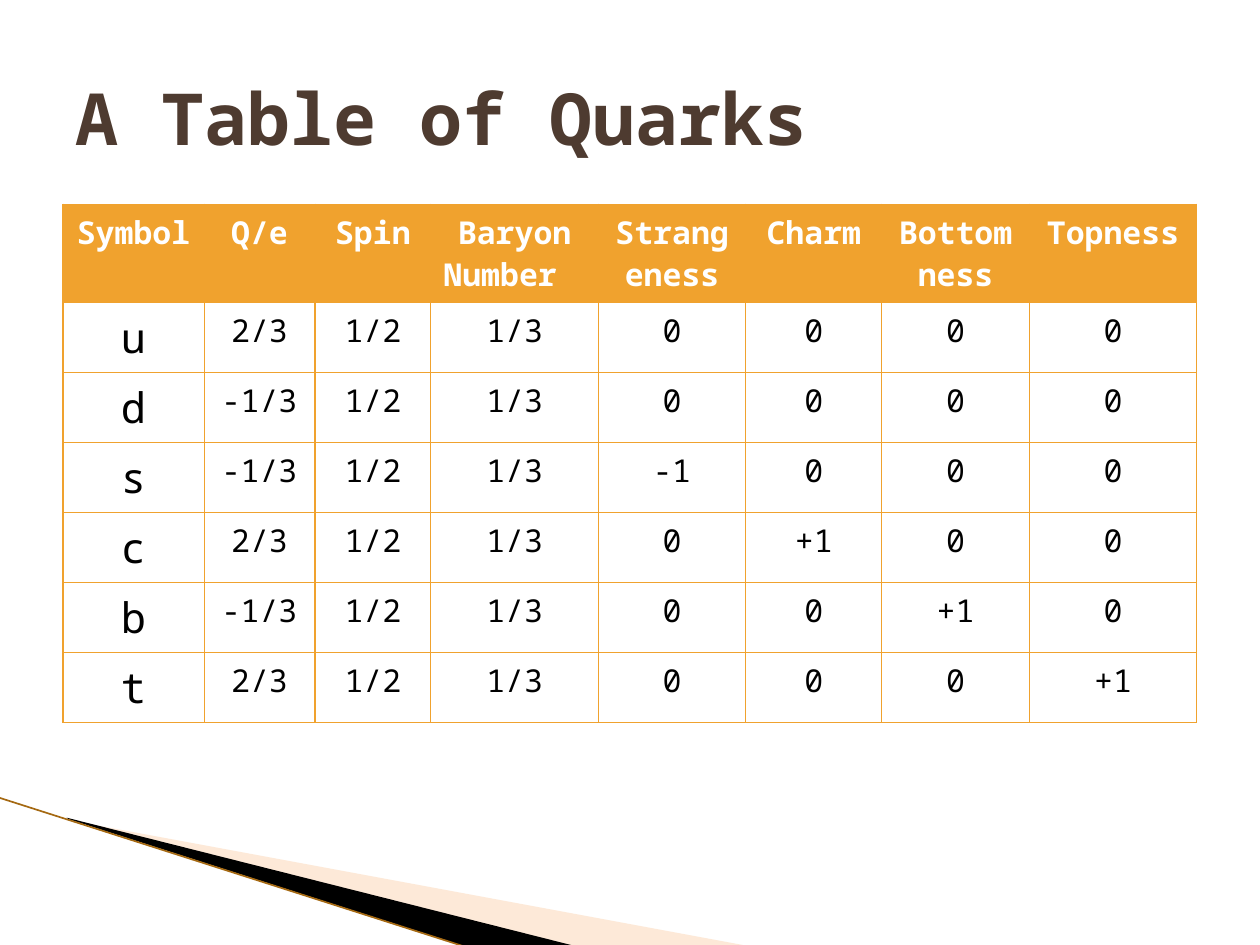
from lxml.etree import SubElement
from pptx import Presentation
from pptx.dml.color import RGBColor
from pptx.enum.shapes import MSO_CONNECTOR
from pptx.enum.text import MSO_ANCHOR, PP_ALIGN
from pptx.oxml.ns import qn
from pptx.util import Inches, Pt

FONT = "Noto Sans Mono"
ORANGE = RGBColor(0xF0, 0xA2, 0x2E)
PEACH = RGBColor(0xFB, 0xC9, 0x9E)
BRONZE = RGBColor(0xA5, 0x69, 0x12)
BROWN = RGBColor(0x4E, 0x3B, 0x30)
BLACK = RGBColor(0, 0, 0)
WHITE = RGBColor(255, 255, 255)

SLIDE_W, SLIDE_H = Inches(10), Inches(7.5)
MARGIN = Inches(0.5)
CONTENT_W = SLIDE_W - 2 * MARGIN

HEADINGS = ["Symbol", "Q/e", "Spin", "Baryon\nNumber", "Strangeness",
            "Charm", "Bottomness", "Topness"]
COLUMN_SHARES = [1.12, 0.88, 0.92, 1.33, 1.17, 1.08, 1.17, 1.33]
QUARKS = [
    ("u", "2/3", "1/2", "1/3", "0", "0", "0", "0"),
    ("d", "-1/3", "1/2", "1/3", "0", "0", "0", "0"),
    ("s", "-1/3", "1/2", "1/3", "-1", "0", "0", "0"),
    ("c", "2/3", "1/2", "1/3", "0", "+1", "0", "0"),
    ("b", "-1/3", "1/2", "1/3", "0", "0", "+1", "0"),
    ("t", "2/3", "1/2", "1/3", "0", "0", "0", "+1"),
]


def add_run(paragraph, text, size, color, bold=False):
    run = paragraph.add_run()
    run.text = text
    font = run.font
    font.name, font.size, font.bold = FONT, Pt(size), bold
    font.color.rgb = color


def add_wedge(slide, corners, color, opacity=100):
    """Fill a polygon whose corners are given in inches."""
    start, *others = [(Inches(x), Inches(y)) for x, y in corners]
    builder = slide.shapes.build_freeform(*start)
    builder.add_line_segments(others, close=True)
    wedge = builder.convert_to_shape()
    wedge.shadow.inherit = False
    wedge.fill.solid()
    wedge.fill.fore_color.rgb = color
    wedge.line.fill.background()
    if opacity < 100:
        fill_color = wedge._element.spPr.find(qn("a:solidFill"))[0]
        SubElement(fill_color, qn("a:alpha"), val=str(opacity * 1000))


def add_corner_sweep(slide):
    add_wedge(slide, [(0.55, 6.51), (5.95, 7.51), (4.56, 7.51), (0.55, 6.5)], PEACH, 40)
    add_wedge(slide, [(0.53, 6.49), (4.57, 7.51), (3.72, 7.52), (0.54, 6.5)], BLACK)
    edge = slide.shapes.add_connector(
        MSO_CONNECTOR.STRAIGHT, Inches(-0.01), Inches(6.33), Inches(3.71), Inches(7.52))
    edge.line.color.rgb = BRONZE
    edge.line.width = Pt(0.95)
    SubElement(edge._element.spPr, qn("a:effectLst"))


def set_borders(cell):
    properties = cell._tc.get_or_add_tcPr()
    for position, side in enumerate(("a:lnL", "a:lnR", "a:lnT", "a:lnB")):
        border = properties.makeelement(qn(side), {"w": str(Pt(0.75))})
        fill = SubElement(border, qn("a:solidFill"))
        SubElement(fill, qn("a:srgbClr"), val=str(ORANGE))
        properties.insert(position, border)


def fill_cell(cell, text, size, color, heading):
    if heading:
        cell.fill.solid()
        cell.fill.fore_color.rgb = ORANGE
    else:
        cell.fill.background()
    set_borders(cell)
    frame = cell.text_frame
    for index, line in enumerate(text.split("\n")):
        paragraph = frame.add_paragraph() if index else frame.paragraphs[0]
        paragraph.alignment = PP_ALIGN.LEFT if index else PP_ALIGN.CENTER
        add_run(paragraph, line, size, color, heading)


def add_quark_table(slide, left, top, width, row_height):
    rows = [HEADINGS, *QUARKS]
    table = slide.shapes.add_table(
        len(rows), len(HEADINGS), left, top, width, row_height * len(rows)).table
    table.horz_banding = False
    for column, share in zip(table.columns, COLUMN_SHARES):
        column.width = int(width * share / sum(COLUMN_SHARES))
    for r, row in enumerate(rows):
        table.rows[r].height = row_height
        for c, text in enumerate(row):
            heading = r == 0
            size = 24 if c == 0 and not heading else 18
            fill_cell(table.cell(r, c), text, size, WHITE if heading else BLACK, heading)


def set_title(slide, left, top, width, height):
    title = slide.shapes.title
    title.left, title.top, title.width, title.height = left, top, width, height
    frame = title.text_frame
    frame.word_wrap = True
    frame.vertical_anchor = MSO_ANCHOR.MIDDLE
    frame.paragraphs[0].alignment = PP_ALIGN.LEFT
    add_run(frame.paragraphs[0], "A Table of Quarks", 41, BROWN, bold=True)


def main():
    deck = Presentation()
    deck.slide_width, deck.slide_height = SLIDE_W, SLIDE_H
    slide = deck.slides.add_slide(deck.slide_layouts[5])
    set_title(slide, MARGIN, Inches(0.3), CONTENT_W, Inches(1.25))
    add_corner_sweep(slide)
    add_quark_table(slide, MARGIN, Inches(1.62), CONTENT_W, Inches(0.41))
    deck.save("out.pptx")


if __name__ == "__main__":
    main()
